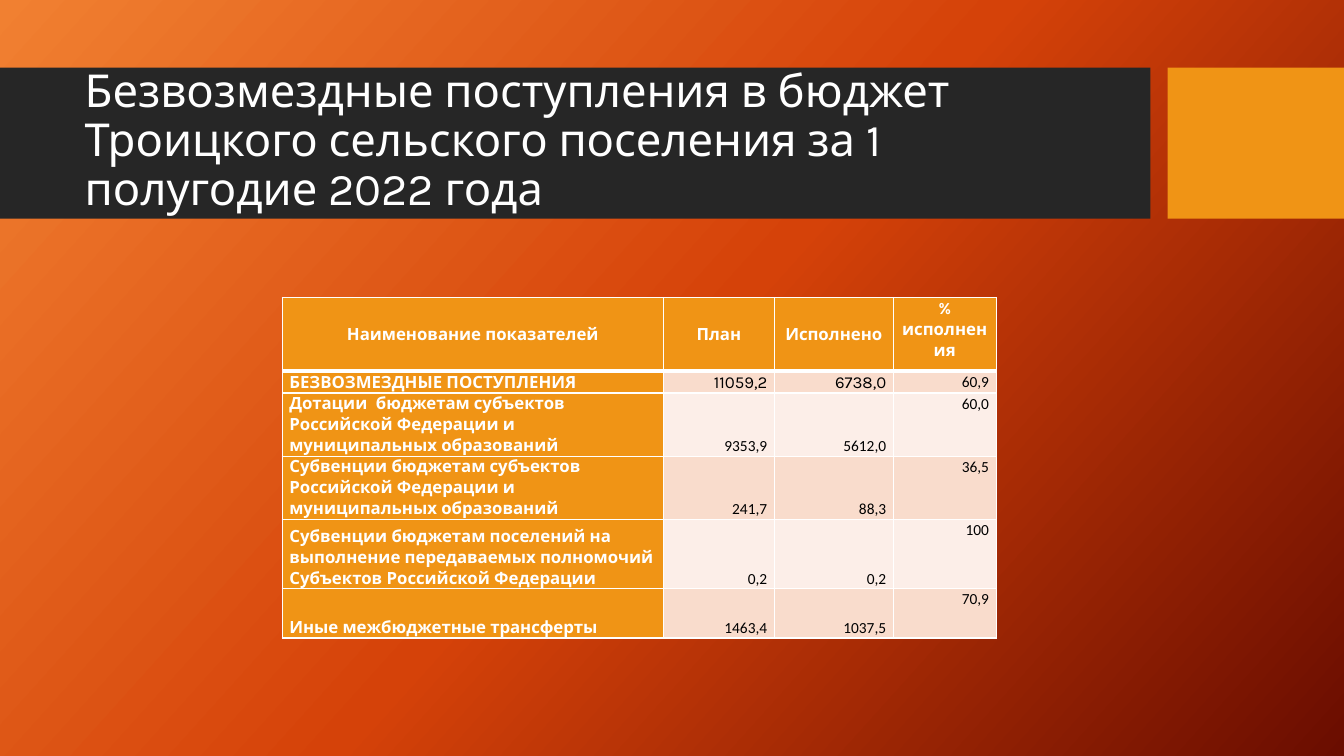
from lxml import etree
from pptx import Presentation
from pptx.dml.color import RGBColor
from pptx.enum.shapes import MSO_SHAPE as Shape
from pptx.enum.text import MSO_ANCHOR as Anchor, PP_ALIGN as Align
from pptx.oxml.ns import qn
from pptx.util import Inches, Pt

WHITE = RGBColor(0xFF, 0xFF, 0xFF)
BLACK = RGBColor(0x00, 0x00, 0x00)
CHARCOAL = RGBColor(0x26, 0x26, 0x26)
AMBER = RGBColor(0xF0, 0x94, 0x15)
PEACH = RGBColor(0xF9, 0xDC, 0xCC)
PALE_PEACH = RGBColor(0xFC, 0xEE, 0xE8)
GLOW = RGBColor(0xF1, 0x80, 0x31)
FLAME = RGBColor(0xD5, 0x42, 0x09)
MAROON = RGBColor(0x6A, 0x0D, 0x00)

HEADERS = ["Наименование показателей", "План", "Исполнено", "%\nисполнения"]
INCOME = [
    ["БЕЗВОЗМЕЗДНЫЕ ПОСТУПЛЕНИЯ", "11059,2", "6738,0", "60,9"],
    ["Дотации  бюджетам субъектов Российской Федерации и муниципальных образований",
     "9353,9", "5612,0", "60,0"],
    ["Субвенции бюджетам субъектов Российской Федерации и муниципальных образований",
     "241,7", "88,3", "36,5"],
    ["Субвенции бюджетам поселений на выполнение передаваемых полномочий "
     "Субъектов Российской Федерации", "0,2", "0,2", "100"],
    ["Иные межбюджетные трансферты", "1463,4", "1037,5", "70,9"],
]
COLUMN_WIDTHS = [3.78, 1.1, 1.18, 1.02]
ROW_HEIGHTS = [0.73, 0.22, 0.52, 0.58, 0.69, 0.49]


def add_span(para, text, font_name, size, color, bold=False):
    span = para.add_run()
    span.text = text
    span.font.name = font_name
    span.font.size = Pt(size)
    span.font.bold = bold
    span.font.color.rgb = color


def set_borders(cell, bottom_width):
    """Draw white cell edges, 1 pt wide except for the bottom one."""
    properties = cell._tc.get_or_add_tcPr()
    edges = [("a:lnL", 1), ("a:lnR", 1), ("a:lnT", 1), ("a:lnB", bottom_width)]
    for position, (tag, width) in enumerate(edges):
        line = etree.Element(qn(tag), w=str(Pt(width)))
        fill = etree.SubElement(line, qn("a:solidFill"))
        etree.SubElement(fill, qn("a:srgbClr"), val=str(WHITE))
        properties.insert(position, line)


deck = Presentation()
deck.slide_width = Inches(13.33)
deck.slide_height = Inches(7.5)
page = deck.slides.add_slide(deck.slide_layouts[5])

# Background gradient with three stops
background = page.background.fill
background.gradient()
gradient = page._element.cSld.find(".//" + qn("a:gradFill"))
for child in list(gradient):
    gradient.remove(child)
stops = etree.SubElement(gradient, qn("a:gsLst"))
for percent, color in [(0, GLOW), (50, FLAME), (100, MAROON)]:
    stop = etree.SubElement(stops, qn("a:gs"), pos=str(percent * 1000))
    etree.SubElement(stop, qn("a:srgbClr"), val=str(color))
etree.SubElement(gradient, qn("a:lin"), ang=str(42 * 60000), scaled="0")

# Title band and accent block
for left, width, color in [(0, 11.41, CHARCOAL), (11.58, 1.75, AMBER)]:
    band = page.shapes.add_shape(
        Shape.RECTANGLE, Inches(left), Inches(0.67), Inches(width), Inches(1.5))
    band.shadow.inherit = False
    band.fill.solid()
    band.fill.fore_color.rgb = color
    band.line.fill.background()

# Title, brought in front of the band
title = page.shapes.title
page.shapes._spTree.append(title._element)
title.left, title.top = Inches(0.74), Inches(0.82)
title.width, title.height = Inches(10.51), Inches(1.18)
title.text_frame.word_wrap = True
title.text_frame.vertical_anchor = Anchor.MIDDLE
para = title.text_frame.paragraphs[0]
para.alignment = Align.LEFT
para.line_spacing = 0.9
add_span(para, "Безвозмездные поступления в бюджет Троицкого сельского поселения "
         "за 1 полугодие 2022 года", "Karla", 32.4, WHITE)

# Income table
table = page.shapes.add_table(
    len(ROW_HEIGHTS), len(COLUMN_WIDTHS), Inches(2.8), Inches(2.95),
    Inches(sum(COLUMN_WIDTHS)), Inches(sum(ROW_HEIGHTS))).table
table.first_col = True
for column, width in zip(table.columns, COLUMN_WIDTHS):
    column.width = Inches(width)
for row, height in zip(table.rows, ROW_HEIGHTS):
    row.height = Inches(height)

last_column = len(COLUMN_WIDTHS) - 1
for row_index, texts in enumerate([HEADERS] + INCOME):
    for column_index, text in enumerate(texts):
        cell = table.cell(row_index, column_index)
        is_header = row_index == 0
        is_label = is_header or column_index == 0
        is_total = row_index == 1 and column_index < last_column

        cell.margin_left = cell.margin_right = Inches(0.07)
        cell.margin_top = cell.margin_bottom = 0
        if column_index == last_column:
            cell.vertical_anchor = Anchor.TOP
        else:
            cell.vertical_anchor = Anchor.MIDDLE if is_header else Anchor.BOTTOM
        cell.fill.solid()
        if is_label:
            cell.fill.fore_color.rgb = AMBER
        else:
            cell.fill.fore_color.rgb = PEACH if row_index % 2 else PALE_PEACH
        set_borders(cell, 3 if is_header else 1)

        if is_header:
            alignment = Align.CENTER
        else:
            alignment = Align.LEFT if is_label else Align.RIGHT
        font_name, size = ("Karla", 12) if is_label or is_total else ("Calibri", 11)
        frame = cell.text_frame
        for line_index, line_text in enumerate(text.split("\n")):
            para = frame.add_paragraph() if line_index else frame.paragraphs[0]
            para.alignment = alignment
            para.line_spacing = 1.07
            add_span(para, line_text, font_name, size,
                     WHITE if is_label else BLACK, bold=is_label)

deck.save("out.pptx")
